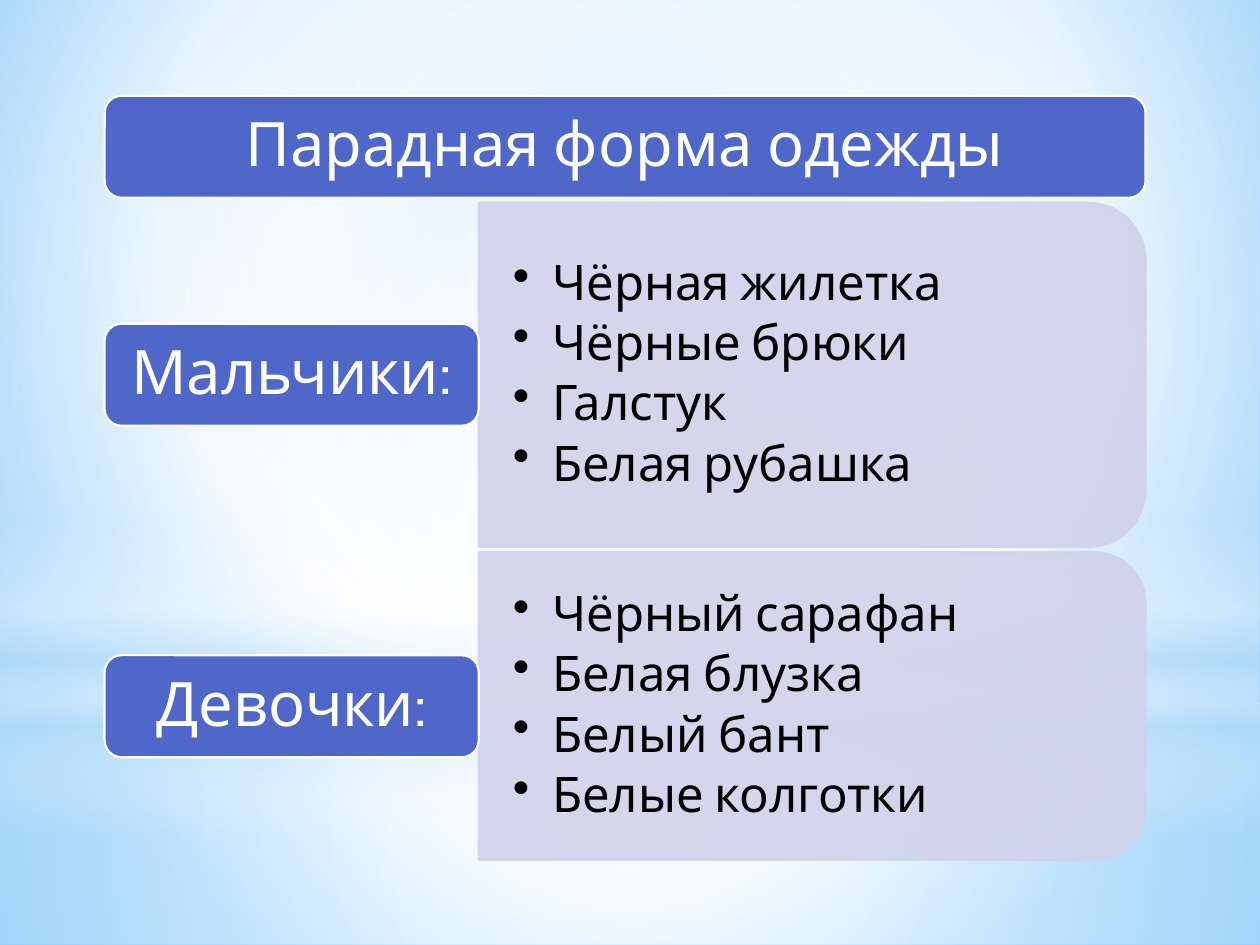
from pptx import Presentation
from pptx.dml.color import RGBColor
from pptx.enum import shapes as sh, text as tx
from pptx.oxml.ns import qn
from pptx.util import Pt
from lxml import etree

TITLE = "Парадная форма одежды"
# label, items, panel top, panel height, label top
GROUPS = [
    ("Мальчики:", ["Чёрная жилетка", "Чёрные брюки", "Галстук", "Белая рубашка"],
     115.9, 196.6, 185),
    ("Девочки:", ["Чёрный сарафан", "Белая блузка", "Белый бант", "Белые колготки"],
     315.6, 175.7, 374.4),
]
THEME = {"font": "Cabin", "label": "4E67C8", "panel": "D0D3EB", "light": "FFFFFF",
         "dark": "000000", "label_size": 35, "item_size": 28, "line": 1.25}
CENTER = (50, 50, 50, 50)
# stops are (position, colour, opacity), all in percent
BACKDROP = [(0, "9ED5FF", 100), (60, "FFFFFF", 100), (100, "5BB9FF", 100)]
GLOWS = [
    ("RECTANGLE", (0, 401.8, 720, 138.2),
     [(0, "FFFFFF", 91), (37, "FFFFFF", 76), (100, "B4DCFA", 79)], CENTER),
    ("RECTANGLE", (0, 0, 720, 401.8),
     [(0, "FFFFFF", 89), (48, "FFFFFF", 62), (100, "B4DCFA", 79)], CENTER),
    ("RECTANGLE", (0, 296.6, 720, 180),
     [(0, "FFFFFF", 0), (29, "FFFFFF", 30), (45, "B4DCFA", 40),
      (55, "FFFFFF", 26), (65, "B4DCFA", 60), (100, "FFFFFF", 0)], None),
    ("OVAL", (0, 126, 720, 401.8), [(0, "FFFFFF", 100), (56, "FFFFFF", 0)], CENTER),
]
LEFT, SPLIT, RIGHT = 59.8, 273.6, 654.6
LABEL_HEIGHT = 58.3


def add_alpha(color_element, percent):
    etree.SubElement(color_element, qn("a:alpha"), val=str(percent * 1000))


def set_gradient(fill, owner, stops, focus):
    """Circular gradient around focus (left, top, right, bottom), or top-down if None."""
    fill.gradient()
    gradient = owner.find(".//" + qn("a:gradFill"))
    for child in list(gradient):
        gradient.remove(child)
    stop_list = etree.SubElement(gradient, qn("a:gsLst"))
    for position, color, opacity in stops:
        stop = etree.SubElement(stop_list, qn("a:gs"), pos=str(position * 1000))
        add_alpha(etree.SubElement(stop, qn("a:srgbClr"), val=color), opacity)
    if focus is None:
        etree.SubElement(gradient, qn("a:lin"), ang="5400000", scaled="0")
    else:
        circle = etree.SubElement(gradient, qn("a:path"), path="circle")
        etree.SubElement(circle, qn("a:fillToRect"),
                         {side: str(v * 1000) for side, v in zip("ltrb", focus)})


def add_shape(slide, kind, box):
    shape = slide.shapes.add_shape(sh.MSO_SHAPE[kind], *map(Pt, box))
    shape.shadow.inherit = False
    return shape


def paint(shape, fill, line):
    shape.fill.solid()
    shape.fill.fore_color.rgb = RGBColor.from_string(fill)
    shape.line.color.rgb = RGBColor.from_string(line)
    shape.line.width = Pt(THEME["line"])


def write(shape, lines, size, color, align, insets):
    frame = shape.text_frame
    side, edge = map(Pt, insets)
    layout = {"word_wrap": True, "vertical_anchor": tx.MSO_ANCHOR.MIDDLE,
              "margin_left": side, "margin_right": side,
              "margin_top": edge, "margin_bottom": edge}
    for name, value in layout.items():
        setattr(frame, name, value)
    frame.text = "\n".join(lines)
    for paragraph in frame.paragraphs:
        paragraph.alignment = align
        paragraph.line_spacing = 0.9
        font = paragraph.runs[0].font
        for name, value in {"name": THEME["font"], "size": Pt(size)}.items():
            setattr(font, name, value)
        font.color.rgb = RGBColor.from_string(color)
    return frame.paragraphs


def add_label(slide, caption, top, right):
    label = add_shape(slide, "ROUNDED_RECTANGLE", (LEFT, top, right - LEFT, LABEL_HEIGHT))
    paint(label, THEME["label"], THEME["light"])
    write(label, [caption], THEME["label_size"], THEME["light"],
          tx.PP_ALIGN.CENTER, (6, 5))


def add_panel(slide, items, top, height):
    """Panel rounded on its right side, with a bulleted list over it."""
    width = RIGHT - SPLIT
    # A quarter turn swaps width and height about the same centre.
    shift = (width - height) / 2
    panel = add_shape(slide, "ROUND_2_SAME_RECTANGLE",
                      (SPLIT + shift, top - shift, height, width))
    panel.rotation = 90
    paint(panel, THEME["panel"], THEME["panel"])
    for color in panel.element.spPr.iter(qn("a:srgbClr")):
        add_alpha(color, 90)
    inset = 9
    item_box = slide.shapes.add_textbox(
        *map(Pt, (SPLIT, top + inset, width - inset, height - 2 * inset)))
    for paragraph in write(item_box, items, THEME["item_size"], THEME["dark"],
                           tx.PP_ALIGN.LEFT, (19.5, 10)):
        paragraph.space_after = Pt(0.15 * THEME["item_size"])
        properties = paragraph._p.get_or_add_pPr()
        properties.set("marL", str(Pt(22.5)))
        properties.set("indent", str(Pt(-22.5)))
        etree.SubElement(properties, qn("a:buChar"), char="•")


def main():
    deck = Presentation()
    deck.slide_width, deck.slide_height = Pt(720), Pt(540)
    slide = deck.slides.add_slide(deck.slide_layouts[6])
    set_gradient(slide.background.fill, slide.element, BACKDROP, (20, 10, 20, 60))
    for kind, box, stops, focus in GLOWS:
        glow = add_shape(slide, kind, box)
        set_gradient(glow.fill, glow.element, stops, focus)
        glow.line.fill.background()
    add_label(slide, TITLE, 54.7, RIGHT)
    for caption, items, top, height, label_top in GROUPS:
        add_panel(slide, items, top, height)
        add_label(slide, caption, label_top, SPLIT)
    deck.save("out.pptx")


if __name__ == "__main__":
    main()
